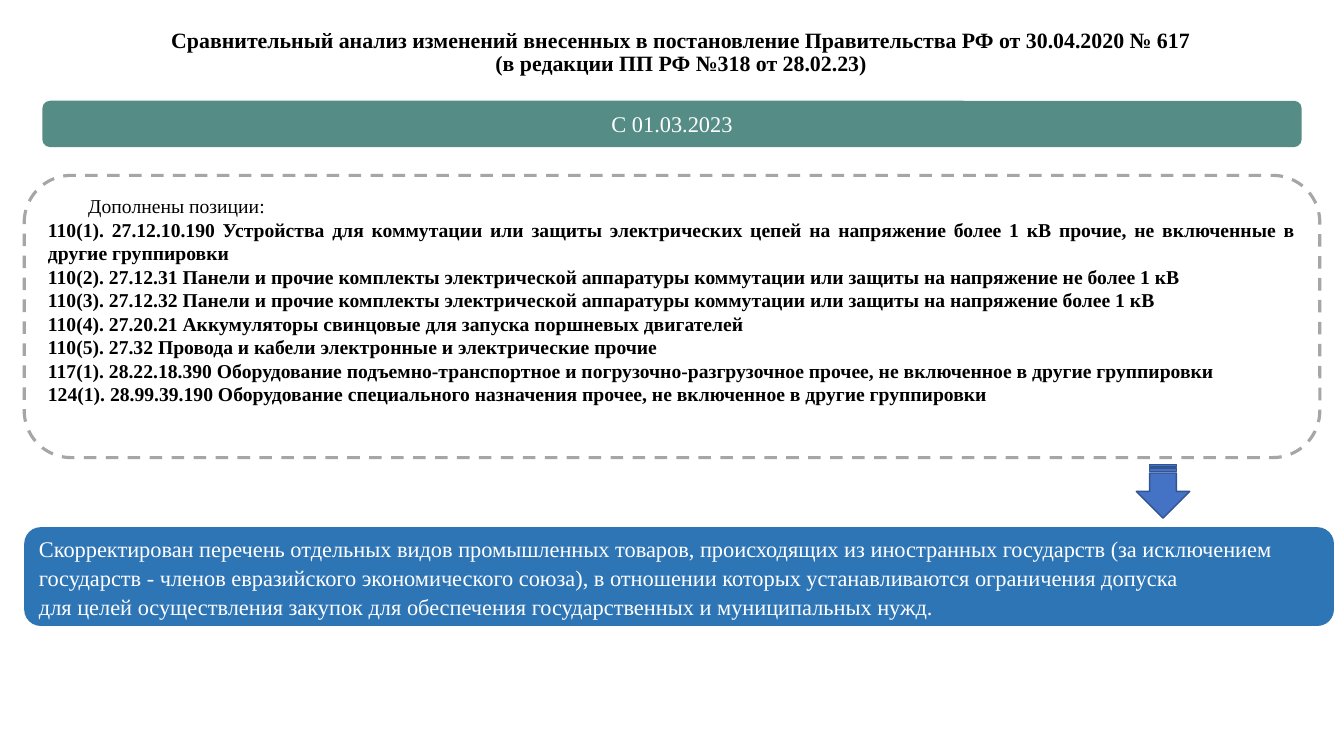
from dataclasses import dataclass

from pptx import Presentation
from pptx.dml.color import RGBColor
from pptx.enum.dml import MSO_LINE
from pptx.enum.shapes import MSO_SHAPE
from pptx.enum.text import MSO_ANCHOR, PP_ALIGN
from pptx.util import Inches, Pt


@dataclass(frozen=True)
class Theme:
    font: str = "Times New Roman"
    ink: str = "000000"
    paper: str = "FFFFFF"
    date_fill: str = "568C86"
    summary_fill: str = "2E75B6"
    frame_line: str = "A6A6A6"
    arrow_fill: str = "4472C4"
    arrow_line: str = "325491"
    title_size: float = 15.6
    list_size: float = 14
    banner_size: float = 16


THEME = Theme()

TITLE = [
    "Сравнительный анализ изменений внесенных в постановление Правительства РФ от 30.04.2020 № 617",
    "(в редакции ПП РФ №318 от 28.02.23)",
]
LIST_HEADING = "Дополнены позиции:"
POSITIONS = [
    "110(1). 27.12.10.190 Устройства для коммутации или защиты электрических цепей на напряжение более 1 кВ прочие, не включенные в другие группировки",
    "110(2). 27.12.31 Панели и прочие комплекты электрической аппаратуры коммутации или защиты на напряжение не более 1 кВ",
    "110(3). 27.12.32 Панели и прочие комплекты электрической аппаратуры коммутации или защиты на напряжение более 1 кВ",
    "110(4). 27.20.21 Аккумуляторы свинцовые для запуска поршневых двигателей",
    "110(5). 27.32 Провода и кабели электронные и электрические прочие",
    "117(1). 28.22.18.390 Оборудование подъемно-транспортное и погрузочно-разгрузочное прочее, не включенное в другие группировки",
    "124(1). 28.99.39.190 Оборудование специального назначения прочее, не включенное в другие группировки",
]
SUMMARY = [
    "Скорректирован перечень отдельных видов промышленных товаров, происходящих из иностранных государств (за исключением",
    "государств - членов евразийского экономического союза), в отношении которых устанавливаются ограничения допуска",
    "для целей осуществления закупок для обеспечения государственных и муниципальных нужд.",
]


def color(value):
    return RGBColor.from_string(value)


def add_panel(page, box, kind, fill=None, line=None, width=1):
    """Place a preset shape with a flat fill and an optional outline."""
    panel = page.shapes.add_shape(kind, *map(Inches, box))
    panel.shadow.inherit = False
    if fill:
        panel.fill.solid()
        panel.fill.fore_color.rgb = color(fill)
    else:
        panel.fill.background()
    if line:
        panel.line.color.rgb = color(line)
        panel.line.width = Pt(width)
    else:
        panel.line.fill.background()
    return panel


def write_lines(shape, lines, size, ink, align, anchor, bold=False, spacing=1.0):
    """Write one paragraph per line in a single style."""
    frame = shape.text_frame
    frame.word_wrap = True
    frame.vertical_anchor = anchor
    frame.text = "\n".join(lines)
    for para in frame.paragraphs:
        para.alignment = align
        para.line_spacing = spacing
        for span in para.runs:
            span.font.name = THEME.font
            span.font.size = Pt(size)
            span.font.bold = bold
            span.font.color.rgb = color(ink)
    return frame


def add_title(page, box):
    title = page.shapes.add_textbox(*map(Inches, box))
    frame = write_lines(title, TITLE, THEME.title_size, THEME.ink, PP_ALIGN.CENTER,
                        MSO_ANCHOR.BOTTOM, bold=True, spacing=0.9)
    frame.margin_bottom = Inches(0.29)


def add_positions(page, box):
    frame_panel = add_panel(page, box, MSO_SHAPE.ROUNDED_RECTANGLE,
                            line=THEME.frame_line, width=2.25)
    frame_panel.line.dash_style = MSO_LINE.DASH
    frame = write_lines(frame_panel, [LIST_HEADING, *POSITIONS], THEME.list_size, THEME.ink,
                        PP_ALIGN.JUSTIFY, MSO_ANCHOR.TOP, bold=True)
    # The heading is regular and indented
    heading = frame.paragraphs[0]
    heading.runs[0].font.bold = False
    heading._p.get_or_add_pPr().set("indent", str(Inches(0.4)))


def add_banner(page, box, lines, fill, align, spacing=1.0):
    banner = add_panel(page, box, MSO_SHAPE.ROUNDED_RECTANGLE, fill)
    write_lines(banner, lines, THEME.banner_size, THEME.paper, align,
                MSO_ANCHOR.MIDDLE, spacing=spacing)


def add_down_arrow(page, box):
    arrow = add_panel(page, box, MSO_SHAPE.STRIPED_RIGHT_ARROW,
                      THEME.arrow_fill, THEME.arrow_line)
    arrow.rotation = 90


def main():
    deck = Presentation()
    deck.slide_width, deck.slide_height = Inches(13.33), Inches(7.5)
    page = deck.slides.add_slide(deck.slide_layouts[6])

    # Added positions and their effective date
    add_positions(page, (0.24, 1.74, 12.85, 2.8))
    add_banner(page, (0.42, 1, 12.49, 0.46), ["С 01.03.2023"],
               THEME.date_fill, PP_ALIGN.CENTER)

    # Arrow, title and resulting change
    add_down_arrow(page, (11.27, 4.61, 0.53, 0.53))
    add_title(page, (0.42, -0.04, 12.67, 1.09))
    add_banner(page, (0.24, 5.23, 12.99, 0.98), SUMMARY,
               THEME.summary_fill, PP_ALIGN.JUSTIFY, spacing=1.07)

    deck.save("out.pptx")


if __name__ == "__main__":
    main()
